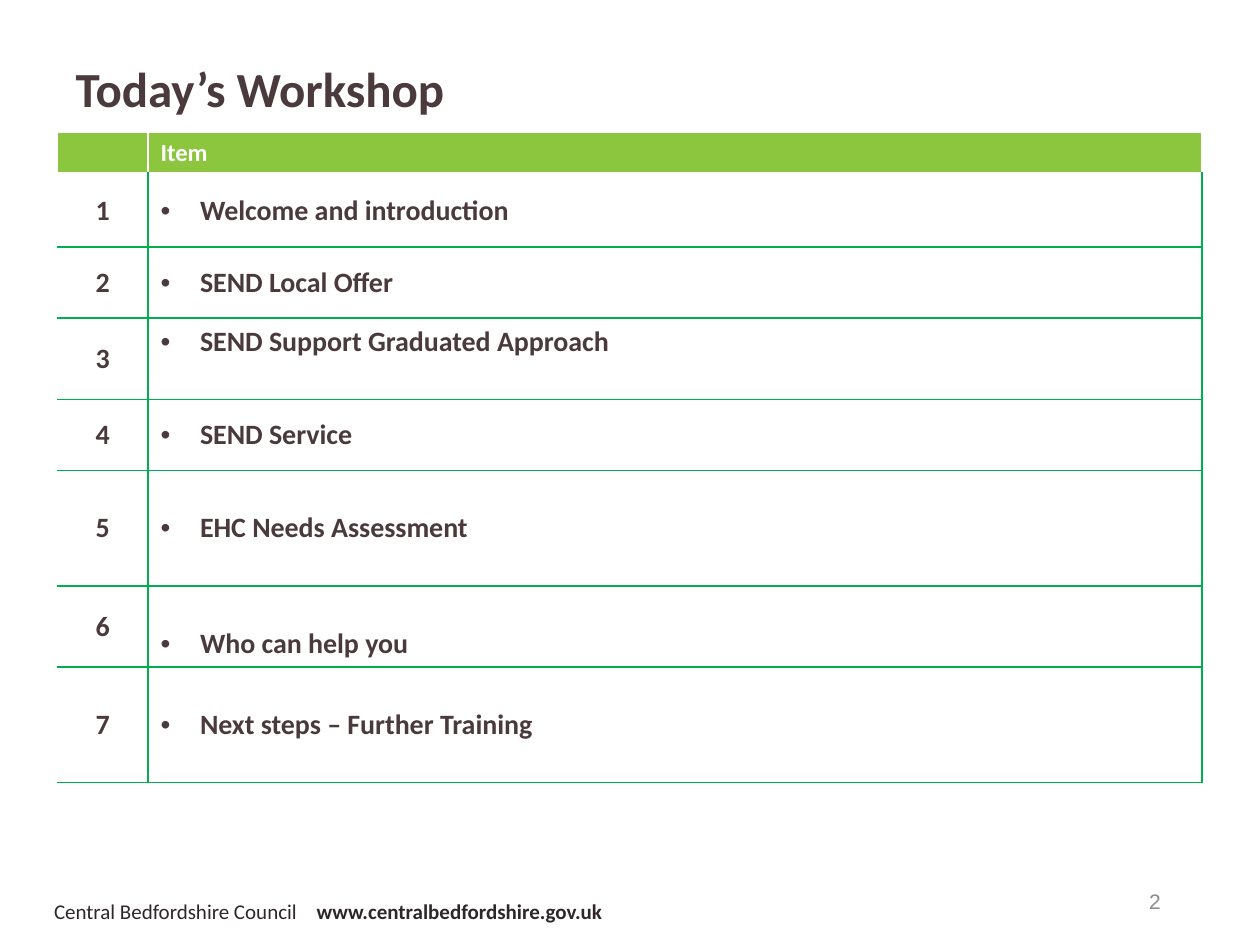
from pptx import Presentation
from pptx.dml.color import RGBColor
from pptx.enum.text import MSO_ANCHOR, PP_ALIGN
from pptx.oxml.ns import qn
from pptx.util import Pt
from lxml import etree

TOP, MIDDLE, BOTTOM = MSO_ANCHOR.TOP, MSO_ANCHOR.MIDDLE, MSO_ANCHOR.BOTTOM
LEFT, CENTER, RIGHT = PP_ALIGN.LEFT, PP_ALIGN.CENTER, PP_ALIGN.RIGHT

THEME = {
    "ink": "4A3A3C", "footer": "2F2727", "number": "8C8C8C",
    "white": "FFFFFF", "header": "8CC63F", "rule": "00B050",
    "title_size": 28, "item_size": 16, "header_size": 14, "small_size": 12,
    "font": "Calibri", "number_font": "Arial",
}

# (item, row height, vertical anchor)
AGENDA = [
    ("Welcome and introduction", 41.4, MIDDLE),
    ("SEND Local Offer", 40.6, MIDDLE),
    ("SEND Support Graduated Approach", 46.5, TOP),
    ("SEND Service", 40.6, MIDDLE),
    ("EHC Needs Assessment", 66, MIDDLE),
    ("Who can help you", 46.3, BOTTOM),
    ("Next steps – Further Training", 66, MIDDLE),
]
HEADER_HEIGHT = 22.6
BULLET_INDENT = Pt(22.5)


def style(paragraph, size, color, bold=False, font="font", align=LEFT):
    paragraph.alignment = align
    for run in paragraph.runs:
        run.font.name = THEME[font]
        run.font.size = Pt(THEME[size])
        run.font.bold = bold
        run.font.color.rgb = RGBColor.from_string(THEME[color])


def set_borders(cell, left, top, right, bottom, bottom_width=1):
    properties = cell._tc.get_or_add_tcPr()
    sides = [("L", left, 1), ("R", right, 1), ("T", top, 1), ("B", bottom, bottom_width)]
    for position, (side, color, width) in enumerate(sides):
        line = etree.Element(qn(f"a:ln{side}"), w=str(Pt(width)))
        fill = etree.SubElement(line, qn("a:solidFill"))
        etree.SubElement(fill, qn("a:srgbClr"), val=THEME[color])
        properties.insert(position, line)


presentation = Presentation()
presentation.slide_width, presentation.slide_height = Pt(720), Pt(540)
slide = presentation.slides.add_slide(presentation.slide_layouts[5])

# Title
title = slide.shapes.title
title.left, title.top, title.width, title.height = Pt(36), Pt(30), Pt(654), Pt(90)
title.text_frame.text = "Today’s Workshop"
title.text_frame.vertical_anchor = TOP
style(title.text_frame.paragraphs[0], "title_size", "ink", bold=True)

# Agenda table
table_height = HEADER_HEIGHT + sum(height for _, height, _ in AGENDA)
agenda = slide.shapes.add_table(
    len(AGENDA) + 1, 2, Pt(32.9), Pt(75.6), Pt(654), Pt(table_height)).table
agenda.horz_banding = False
agenda.columns[0].width, agenda.columns[1].width = Pt(51.7), Pt(602.3)

# Header row; the end mark keeps the empty cell from stretching the row
agenda.rows[0].height = Pt(HEADER_HEIGHT)
agenda.cell(0, 1).text_frame.text = "Item"
for heading in agenda.rows[0].cells:
    heading_line = heading.text_frame.paragraphs[0]
    style(heading_line, "header_size", "white", bold=True)
    etree.SubElement(heading_line._p, qn("a:endParaRPr"), sz=str(THEME["header_size"] * 100))
    heading.fill.solid()
    heading.fill.fore_color.rgb = RGBColor.from_string(THEME["header"])
    set_borders(heading, "white", "white", "white", "white", bottom_width=3)

# Numbered items
for number, (item, height, anchor) in enumerate(AGENDA, start=1):
    agenda.rows[number].height = Pt(height)
    number_cell, item_cell = agenda.cell(number, 0), agenda.cell(number, 1)
    number_cell.text_frame.text = str(number)
    item_cell.text_frame.text = item
    number_cell.vertical_anchor, item_cell.vertical_anchor = MIDDLE, anchor

    item_paragraph = item_cell.text_frame.paragraphs[0]
    bullet = item_paragraph._p.get_or_add_pPr()
    bullet.set("marL", str(BULLET_INDENT))
    bullet.set("indent", str(-BULLET_INDENT))
    etree.SubElement(bullet, qn("a:buFont"), typeface=THEME["number_font"])
    etree.SubElement(bullet, qn("a:buChar"), char="•")
    style(item_paragraph, "item_size", "ink", bold=True)
    style(number_cell.text_frame.paragraphs[0], "item_size", "ink", bold=True, align=CENTER)

    top = "white" if number == 1 else "rule"
    for cell, left in ((number_cell, "white"), (item_cell, "rule")):
        cell.fill.background()
        set_borders(cell, left, top, "rule", "rule")

# Footer, with a tab stop between council and web address
footer = slide.shapes.add_textbox(Pt(23.8), Pt(509.8), Pt(558), Pt(21.6)).text_frame
footer.word_wrap = True
footer_line = footer.paragraphs[0]
tab_stops = etree.SubElement(footer_line._p.get_or_add_pPr(), qn("a:tabLst"))
etree.SubElement(tab_stops, qn("a:tab"), pos=str(Pt(150)), algn="l")
footer_line.add_run().text = "Central Bedfordshire Council\t"
web_address = footer_line.add_run()
web_address.text = "www.centralbedfordshire.gov.uk"
style(footer_line, "small_size", "footer")
web_address.font.bold = True

# Slide number
page = slide.shapes.add_textbox(Pt(508.3), Pt(500.4), Pt(162), Pt(28.8)).text_frame
page.word_wrap = True
page.vertical_anchor = MIDDLE
page.text = "2"
style(page.paragraphs[0], "small_size", "number", font="number_font", align=RIGHT)

presentation.save("out.pptx")
